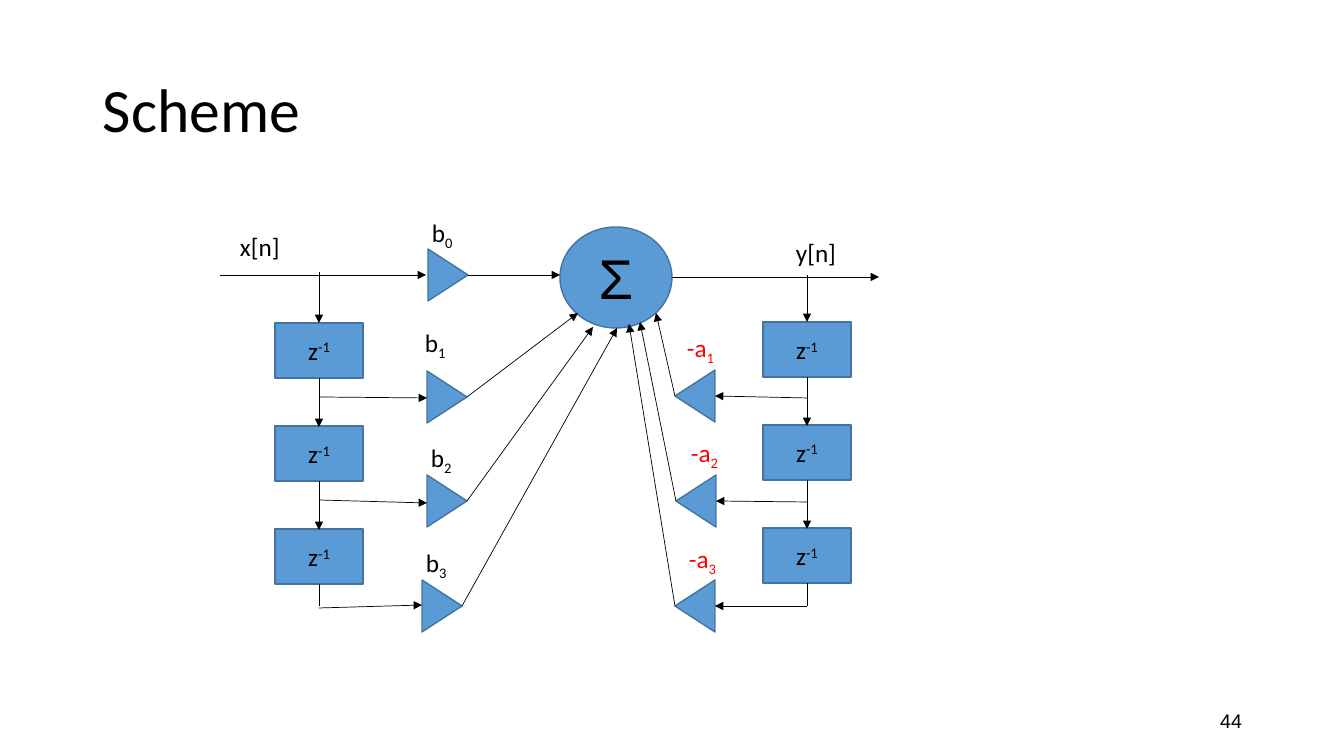
from collections import namedtuple
from lxml.etree import SubElement
from pptx import Presentation
from pptx.dml.color import RGBColor
from pptx.enum.shapes import MSO_CONNECTOR, MSO_SHAPE
from pptx.enum.text import MSO_ANCHOR, PP_ALIGN
from pptx.oxml.ns import qn
from pptx.util import Pt

EMU_PER_PX = 914400 / 100.8
COLORS = {"ink": "000000", "fill": "5B9BD5", "edge": "43739E", "feedback": "FF0000"}
DELAY_WIDTH, DELAY_HEIGHT, DELAY_PITCH = 88, 55, 103
GAIN_BASE, GAIN_DEPTH = 52, 40
LABEL_HEIGHT = 40

# gain: distance from the outer edge and below the delay; tap: rise at start and tip;
# label: distance from the gain centre; target: point inside the summer box
Tap = namedtuple("Tap", "index gain tap label target")


def px(length):
    return round(length * EMU_PER_PX)


def color(name):
    return RGBColor.from_string(COLORS[name])


def set_text(shape, parts, size=18, font="Calibri", ink="ink",
             align=PP_ALIGN.LEFT, anchor=MSO_ANCHOR.TOP):
    """Write (text, baseline) parts as runs of one paragraph."""
    frame = shape.text_frame
    frame.word_wrap = True
    frame.vertical_anchor = anchor
    paragraph = frame.paragraphs[0]
    paragraph.alignment = align
    for text, baseline in parts:
        run = paragraph.add_run()
        run.text = text
        run.font.size = Pt(size)
        run.font.name = font
        run.font.color.rgb = color(ink)
        if baseline:
            run.font._element.set("baseline", str(baseline * 1000))
    return paragraph


def add_label(slide, box, parts, **style):
    shape = slide.shapes.add_textbox(*map(px, box))
    return set_text(shape, parts, **style)


def add_block(slide, kind, box):
    shape = slide.shapes.add_shape(kind, *map(px, box))
    shape.shadow.inherit = False
    shape.fill.solid()
    shape.fill.fore_color.rgb = color("fill")
    shape.line.color.rgb = color("edge")
    shape.line.width = Pt(1)
    return shape


def add_wire(slide, start, end, arrow=True):
    wire = slide.shapes.add_connector(MSO_CONNECTOR.STRAIGHT, *map(px, (*start, *end)))
    wire.line.color.rgb = color("ink")
    wire.line.width = Pt(0.5)
    if arrow:
        SubElement(wire.line._get_or_add_ln(), qn("a:tailEnd"), type="triangle")
    SubElement(wire._element.spPr, qn("a:effectLst"))


def add_gain(slide, center, rotation):
    x, y = center
    gain = add_block(slide, MSO_SHAPE.FLOWCHART_EXTRACT,
                     (x - GAIN_BASE / 2, y - GAIN_DEPTH / 2, GAIN_BASE, GAIN_DEPTH))
    gain.rotation = rotation


def add_summer(slide, box):
    summer = add_block(slide, MSO_SHAPE.OVAL, box)
    set_text(summer, [("Σ", 0)], size=40, font="Arial",
             align=PP_ALIGN.CENTER, anchor=MSO_ANCHOR.MIDDLE)


def add_delay_line(slide, box, summer_box, taps, name, ink, label_width, inward):
    """Draw a chain of delays; inward is 1 when its taps point right, -1 when left."""
    left, top, width, height = box
    outer = left if inward == 1 else left + width
    middle = outer + inward * DELAY_WIDTH / 2
    first_top = top + height - DELAY_HEIGHT - DELAY_PITCH * (len(taps) - 1)

    # Delay blocks
    for row in range(len(taps)):
        delay = add_block(slide, MSO_SHAPE.RECTANGLE,
                          (middle - DELAY_WIDTH / 2, first_top + row * DELAY_PITCH,
                           DELAY_WIDTH, DELAY_HEIGHT))
        set_text(delay, [("z", 0), ("-1", 30)],
                 align=PP_ALIGN.CENTER, anchor=MSO_ANCHOR.MIDDLE)

    # Wires, gains and coefficient labels
    add_wire(slide, (middle, top), (middle, first_top))
    for row, tap in enumerate(taps):
        bottom = first_top + row * DELAY_PITCH + DELAY_HEIGHT
        x, y = outer + inward * tap.gain[0], bottom + tap.gain[1]
        reach = inward * GAIN_DEPTH / 2
        add_gain(slide, (x, y), 90 * inward % 360)
        if row < len(taps) - 1:
            add_wire(slide, (middle, bottom), (middle, bottom + DELAY_PITCH - DELAY_HEIGHT + 1))
        else:
            add_wire(slide, (middle, bottom), (middle, y), arrow=False)
        add_wire(slide, (middle, y + tap.tap[0]), (x - reach, y + tap.tap[1]))
        add_wire(slide, (x + reach, y),
                 (summer_box[0] + tap.target[0], summer_box[1] + tap.target[1]))
        add_label(slide, (x + tap.label[0], y + tap.label[1], label_width, LABEL_HEIGHT),
                  [(name, 0), (tap.index, -25)], ink=ink)


def add_input(slide, box, summer_left):
    """Draw the input wire, its direct gain and their labels."""
    left, top, width, height = box
    axis = top + height
    gain_x = left + width
    add_gain(slide, (gain_x, axis), 90)
    add_wire(slide, (left, axis), (gain_x - 22, axis))
    add_wire(slide, (gain_x + 20, axis), (summer_left, axis))
    add_label(slide, (left + 10, top + 14, 93, LABEL_HEIGHT), [("x[n]", 0)])
    add_label(slide, (gain_x - 26, top, 45, LABEL_HEIGHT), [("b", 0), ("0", -25)])


def add_output(slide, box):
    left, top, width, height = box
    add_wire(slide, (left, top + height), (left + width, top + height))
    add_label(slide, (left + width - 93, top, 93, LABEL_HEIGHT), [("y[n]", 0)])


def add_scheme(slide, box):
    left, top = box[:2]
    summer_box = (left + 340, top + 15, 112, 101)
    add_summer(slide, summer_box)
    add_input(slide, (left, top, 228, 63), summer_box[0])
    add_output(slide, (left + 452, top + 20, 207, 45))
    forward = [Tap("1", (172, 19), (0, 1), (-32, -75), (18, 86)),
               Tap("2", (172, 20), (-1, 2), (-26, -64), (33, 100)),
               Tap("3", (167, 22), (2, -1), (-26, -64), (57, 101))]
    feedback = [Tap("1", (156, 19), (2, 0), (-18, -69), (96, 86)),
                Tap("2", (155, 21), (1, 0), (-15, -69), (80, 95)),
                Tap("3", (156, 23), (0, 0), (-16, -68), (69, 97))]
    add_delay_line(slide, (left + 55, top + 60, 193, 312), summer_box,
                   forward, "b", "ink", 45, 1)
    add_delay_line(slide, (left + 455, top + 63, 176, 308), summer_box,
                   feedback, "-a", "feedback", 55, -1)


def main():
    presentation = Presentation()
    presentation.slide_width, presentation.slide_height = px(1344), px(756)
    slide = presentation.slides.add_slide(presentation.slide_layouts[6])

    # Title and page number
    title = add_label(slide, (93, 40, 1159, 146), [("Scheme", 0)],
                      size=44, anchor=MSO_ANCHOR.MIDDLE)
    title.line_spacing = 0.9
    add_label(slide, (950, 701, 302, 40), [("44", 0)], size=14, font="Arial",
              align=PP_ALIGN.RIGHT, anchor=MSO_ANCHOR.MIDDLE)

    # Filter diagram
    add_scheme(slide, (220, 212, 659, 420))
    presentation.save("out.pptx")


if __name__ == "__main__":
    main()
